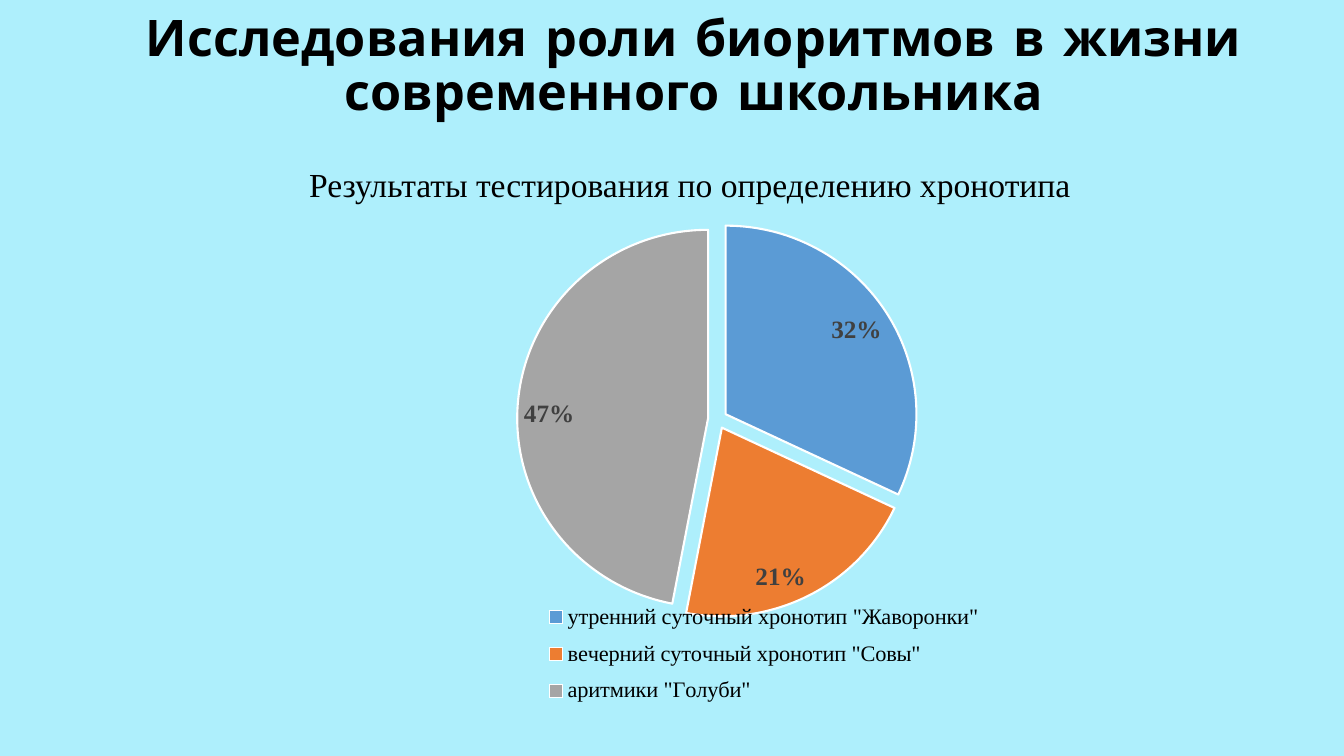
from dataclasses import dataclass

from lxml.etree import SubElement
from pptx import Presentation
from pptx.chart.data import CategoryChartData
from pptx.dml.color import RGBColor
from pptx.enum.chart import XL_CHART_TYPE, XL_LABEL_POSITION, XL_LEGEND_POSITION
from pptx.enum.text import MSO_ANCHOR, MSO_AUTO_SIZE, PP_ALIGN
from pptx.oxml.ns import qn
from pptx.util import Cm, Pt


@dataclass(frozen=True)
class Theme:
    background: str = "AEEFFC"
    text: str = "000000"
    label: str = "404040"
    slice_border: str = "FFFFFF"
    slices: tuple = ("5B9BD5", "ED7D31", "A5A5A5")
    title_font: str = "Comic Neue"
    body_font: str = "Times New Roman"
    title_size: int = 36
    caption_size: int = 24
    label_size: int = 18
    legend_size: int = 16


class SlideBuilder:
    def __init__(self, page, theme):
        self.page = page
        self.theme = theme
        fill = page.background.fill
        fill.solid()
        fill.fore_color.rgb = RGBColor.from_string(theme.background)

    def style(self, font, name, size, color, bold=False):
        font.name = name
        font.size = Pt(size)
        font.bold = bold
        font.color.rgb = RGBColor.from_string(color)

    def title(self, text, left, top, width, height):
        box = self.page.shapes.title
        box.left, box.top, box.width, box.height = left, top, width, height
        frame = box.text_frame
        frame.text = text
        frame.word_wrap = True
        frame.auto_size = MSO_AUTO_SIZE.NONE
        frame.vertical_anchor = MSO_ANCHOR.MIDDLE
        para = frame.paragraphs[0]
        para.alignment = PP_ALIGN.CENTER
        para.line_spacing = 0.9
        self.style(para.font, self.theme.title_font, self.theme.title_size,
                   self.theme.text, bold=True)

    def caption(self, text, left, top, width, height):
        box = self.page.shapes.add_textbox(left, top, width, height)
        frame = box.text_frame
        frame.text = text
        frame.word_wrap = False
        frame.auto_size = MSO_AUTO_SIZE.SHAPE_TO_FIT_TEXT
        self.style(frame.paragraphs[0].font, self.theme.body_font,
                   self.theme.caption_size, self.theme.text)

    def pie(self, shares, left, top, width, height, explosion):
        theme = self.theme
        data = CategoryChartData(number_format="0%")
        data.categories = list(shares)
        data.add_series("Хронотипы", list(shares.values()))
        chart = self.page.shapes.add_chart(
            XL_CHART_TYPE.PIE, left, top, width, height, data).chart
        chart.has_title = False
        self.style(chart.font, theme.body_font, theme.legend_size, theme.text)
        plot = chart.plots[0]
        plot.vary_by_categories = True

        # Slices, pulled apart
        for index, color in enumerate(theme.slices):
            point = plot.series[0].points[index]
            point.format.fill.solid()
            point.format.fill.fore_color.rgb = RGBColor.from_string(color)
            point.format.line.color.rgb = RGBColor.from_string(theme.slice_border)
            point.format.line.width = Pt(1.5)
        for shape_format in plot.series[0]._element.findall(
                f"{qn('c:dPt')}/{qn('c:spPr')}"):
            gap = SubElement(shape_format.getparent(), qn("c:explosion"))
            gap.set("val", str(explosion))
            shape_format.addprevious(gap)

        # Value labels
        plot.has_data_labels = True
        labels = plot.data_labels
        labels.show_value = True
        labels.show_percentage = False
        labels.number_format = "0%"
        labels.number_format_is_linked = False
        labels.position = XL_LABEL_POSITION.INSIDE_END
        self.style(labels.font, theme.body_font, theme.label_size,
                   theme.label, bold=True)

        # Legend below the pie
        chart.has_legend = True
        legend = chart.legend
        legend.position = XL_LEGEND_POSITION.BOTTOM
        legend.include_in_layout = False
        self.style(legend.font, theme.body_font, theme.legend_size, theme.text)

        plot_area = chart._chartSpace.chart.plotArea
        self.place(plot_area, 0, (0, 0, 0.9, 0.74), inner=True)
        self.place(legend._element, 1, (0.21, 0.71, 0.6, 0.24))

    def place(self, part, position, bounds, inner=False):
        """Set a chart part's bounds as fractions of the chart."""
        for layout in part.findall(qn("c:layout")):
            part.remove(layout)
        layout = SubElement(part, qn("c:layout"))
        part.insert(position, layout)
        manual = SubElement(layout, qn("c:manualLayout"))
        settings = [("layoutTarget", "inner")] if inner else []
        settings += [("xMode", "edge"), ("yMode", "edge")]
        settings += zip("xywh", bounds)
        for name, value in settings:
            SubElement(manual, qn(f"c:{name}")).set("val", str(value))


def main():
    deck = Presentation()
    deck.slide_width, deck.slide_height = Cm(33.87), Cm(19.05)
    title_only = deck.slide_layouts[5]
    builder = SlideBuilder(deck.slides.add_slide(title_only), Theme())

    # Heading
    builder.title("Исследования роли биоритмов в жизни современного школьника",
                  Cm(1.12), Cm(-0.28), Cm(32.74), Cm(3.94))
    builder.caption("Результаты тестирования по определению хронотипа",
                    Cm(7.54), Cm(4.01), Cm(19.89), Cm(1.27))

    # Test results
    shares = {
        'утренний суточный хронотип "Жаворонки"': 0.32,
        'вечерний суточный хронотип "Совы"': 0.21,
        'аритмики "Голуби"': 0.47,
    }
    builder.pie(shares, Cm(9.35), Cm(5.66), Cm(19.41), Cm(13), explosion=5)

    deck.save("out.pptx")


if __name__ == "__main__":
    main()
